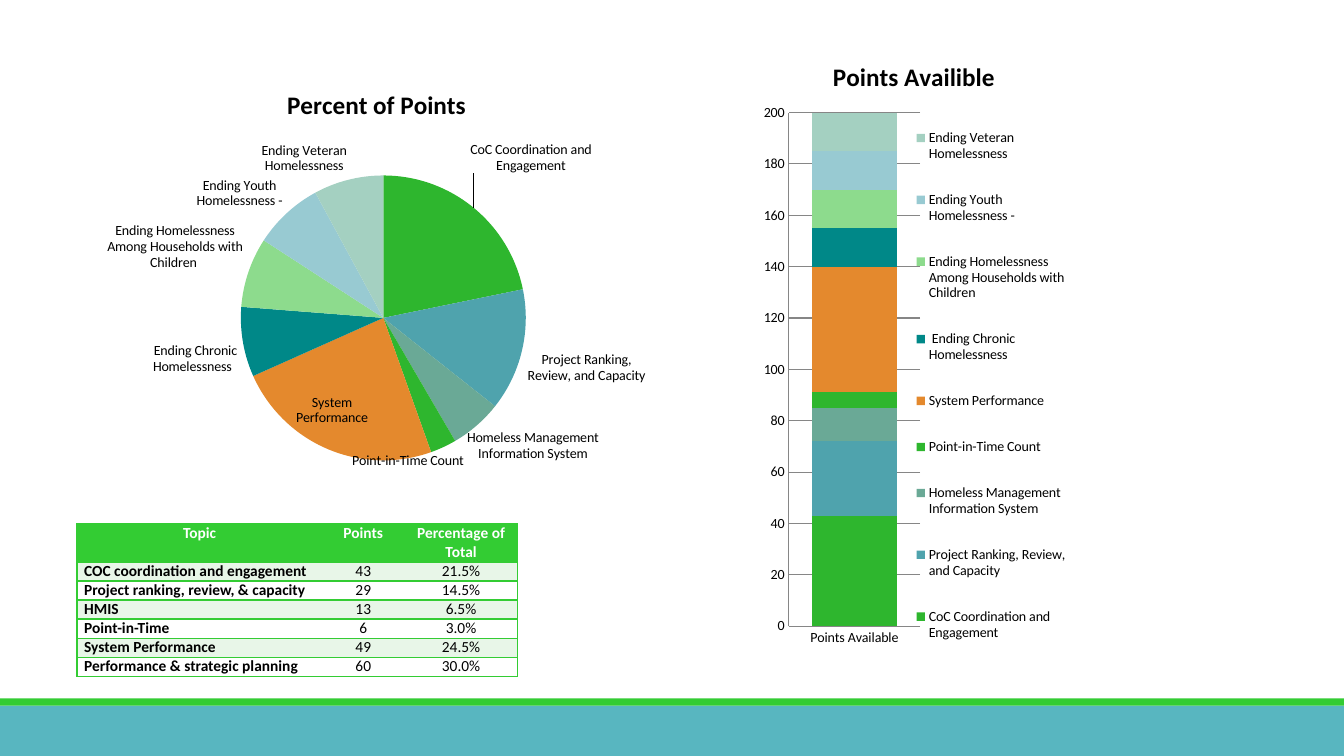
from dataclasses import dataclass

from lxml.etree import SubElement
from pptx import Presentation
from pptx.chart.data import CategoryChartData
from pptx.dml.color import RGBColor
from pptx.enum.chart import (XL_CHART_TYPE, XL_LABEL_POSITION, XL_LEGEND_POSITION,
                             XL_TICK_MARK)
from pptx.enum.shapes import MSO_SHAPE
from pptx.enum.text import PP_ALIGN
from pptx.oxml import parse_xml
from pptx.oxml.ns import nsdecls, qn
from pptx.util import Cm, Pt


@dataclass(frozen=True)
class Theme:
    font: str = "Calibri"
    green: str = "33CC33"
    teal: str = "58B6C0"
    pale_green: str = "E8F6E8"
    white: str = "FFFFFF"
    black: str = "000000"
    grid: str = "868686"
    chart_size: int = 10
    title_size: int = 18
    table_size: int = 11


THEME = Theme()

# Topic, points available, percent of points, colour
TOPICS = [
    ("CoC Coordination and Engagement", 43, 22, "2EB62E"),
    ("Project Ranking, Review, and Capacity", 29, 14, "4FA3AD"),
    ("Homeless Management Information System", 13, 6, "6AA996"),
    ("Point-in-Time Count ", 6, 3, "2EB62E"),
    ("System Performance", 49, 24, "E4892D"),
    (" Ending Chronic Homelessness ", 15, 8, "008888"),
    ("Ending Homelessness Among Households with Children ", 15, 8, "8DDB8D"),
    ("Ending Youth Homelessness -", 15, 8, "98CAD2"),
    ("Ending Veteran Homelessness", 15, 8, "A4D0C1"),
]

# Pie labels moved from their automatic place: index, shift right, shift down
LABEL_SHIFTS = [(0, -0.01, -0.07), (2, -0.02, 0)]

TABLE_ROWS = [
    ("Topic", "Points", "Percentage of Total"),
    ("COC coordination and engagement", "43", "21.5%"),
    ("Project ranking, review, & capacity", "29", "14.5%"),
    ("HMIS", "13", "6.5%"),
    ("Point-in-Time", "6", "3.0%"),
    ("System Performance", "49", "24.5%"),
    ("Performance & strategic planning", "60", "30.0%"),
]


def set_values(target, values):
    for name, value in values.items():
        setattr(target, name, value)


def format_font(font, size, color, bold=False):
    set_values(font, {"name": THEME.font, "size": Pt(size), "bold": bold})
    font.color.rgb = RGBColor.from_string(color)


def fill_solid(target, color):
    target.fill.solid()
    target.fill.fore_color.rgb = RGBColor.from_string(color)


def add_band(slide, top, height, color):
    band = slide.shapes.add_shape(MSO_SHAPE.RECTANGLE, 0, Cm(top), Cm(33.87), Cm(height))
    band.shadow.inherit = False
    fill_solid(band, color)
    band.line.fill.background()


def set_layout(element, position, values):
    """Give a chart part a manual layout in fractions of the chart frame."""
    for old in element.findall(qn("c:layout")):
        element.remove(old)
    layout = parse_xml(f'<c:layout {nsdecls("c")}/>')
    manual = SubElement(layout, qn("c:manualLayout"))
    for name, value in values.items():
        SubElement(manual, qn(f"c:{name}")).set("val", str(value))
    element.insert(position, layout)


def edge_layout(left, top, width, height):
    return {"xMode": "edge", "yMode": "edge", "x": left, "y": top,
            "w": width, "h": height}


def place_plot(chart, *box):
    set_layout(chart.element.find(".//" + qn("c:plotArea")), 0,
               {"layoutTarget": "inner", **edge_layout(*box)})


def add_chart(slide, chart_type, frame, categories, series, title):
    data = CategoryChartData()
    data.categories = categories
    for name, values in series:
        data.add_series(name, values)
    chart = slide.shapes.add_chart(chart_type, *map(Cm, frame), data).chart
    format_font(chart.font, THEME.chart_size, THEME.black)
    chart.has_title = True
    chart.chart_title.text_frame.text = title
    heading = chart.chart_title.text_frame.paragraphs[0].runs[0]
    format_font(heading.font, THEME.title_size, THEME.black, True)
    chart.has_legend = False
    return chart


def shift_label(series, index, right, down):
    label = series.points[index].data_label
    format_font(label.font, THEME.chart_size, THEME.black)
    label.position = XL_LABEL_POSITION.BEST_FIT
    for element in series.data_labels._element.findall(qn("c:dLbl")):
        if element.find(qn("c:idx")).get("val") == str(index):
            element.find(qn("c:showVal")).set("val", "0")
            element.find(qn("c:showCatName")).set("val", "1")
            set_layout(element, 1, {"x": right, "y": down})


def add_percent_pie(slide):
    names, _, percents, colors = zip(*TOPICS)
    title = "Percent of Points"
    chart = add_chart(slide, XL_CHART_TYPE.PIE, (0.94, 1.73, 17.1, 10.74),
                      names, [(title, percents)], title)
    chart.plots[0].vary_by_categories = True
    series = chart.plots[0].series[0]
    for index, color in enumerate(colors):
        fill_solid(series.points[index].format, color)
    labels = series.data_labels
    set_values(labels, {"show_category_name": True, "show_value": False,
                        "show_percentage": False, "number_format": "0",
                        "number_format_is_linked": False,
                        "position": XL_LABEL_POSITION.BEST_FIT})
    format_font(labels.font, THEME.chart_size, THEME.black)
    for shift in LABEL_SHIFTS:
        shift_label(series, *shift)
    place_plot(chart, 0.3, 0.25, 0.42, 0.67)


def add_points_column(slide):
    chart = add_chart(slide, XL_CHART_TYPE.COLUMN_STACKED, (18.98, 0.92, 8.1, 15.98),
                      ["Points Available"],
                      [(name, [points]) for name, points, _, _ in TOPICS],
                      "Points Availible")
    plot = chart.plots[0]
    set_values(plot, {"gap_width": 55, "overlap": 100, "vary_by_categories": False})
    for series, topic in zip(plot.series, TOPICS):
        fill_solid(series.format, topic[3])
    # Axes and grid
    set_values(chart.value_axis, {"minimum_scale": 0, "maximum_scale": 200,
                                  "major_unit": 20, "has_major_gridlines": True})
    for axis in (chart.value_axis, chart.category_axis):
        axis.major_tick_mark = XL_TICK_MARK.NONE
        axis.format.line.color.rgb = RGBColor.from_string(THEME.grid)
    grid_line = chart.value_axis.major_gridlines.format.line
    grid_line.color.rgb = RGBColor.from_string(THEME.grid)
    # Legend
    chart.has_legend = True
    set_values(chart.legend, {"position": XL_LEGEND_POSITION.RIGHT,
                              "include_in_layout": False})
    format_font(chart.legend.font, THEME.chart_size, THEME.black)
    place_plot(chart, 0.11, 0.12, 0.41, 0.81)
    set_layout(chart.element.find(".//" + qn("c:legend")), 1,
               edge_layout(0.49, 0.1, 0.5, 0.9))


def set_borders(cell, visible_sides):
    properties = cell._tc.get_or_add_tcPr()
    for index, side in enumerate("LRTB"):
        paint = (f'<a:solidFill><a:srgbClr val="{THEME.green}"/></a:solidFill>'
                 if side in visible_sides else "<a:noFill/>")
        properties.insert(index, parse_xml(
            f'<a:ln{side} {nsdecls("a")} w="12700">{paint}</a:ln{side}>'))


def add_topic_table(slide):
    widths = (6.18, 2.07, 2.86)
    heights = [0.96] + [0.48] * (len(TABLE_ROWS) - 1)
    table = slide.shapes.add_table(len(TABLE_ROWS), len(widths), Cm(1.94), Cm(13.2),
                                   Cm(sum(widths)), Cm(sum(heights))).table
    for column, width in zip(table.columns, widths):
        column.width = Cm(width)
    for row, height in zip(table.rows, heights):
        row.height = Cm(height)
    for row_index, texts in enumerate(TABLE_ROWS):
        header = row_index == 0
        stripe = THEME.pale_green if row_index % 2 else THEME.white
        for column_index, text in enumerate(texts):
            cell = table.cell(row_index, column_index)
            set_values(cell, {"text": text, "margin_left": Cm(0.18),
                              "margin_right": Cm(0.18), "margin_top": 0,
                              "margin_bottom": 0})
            fill_solid(cell, THEME.green if header else stripe)
            set_borders(cell, "TB" + ("L", "", "R")[column_index])
            paragraph = cell.text_frame.paragraphs[0]
            first = column_index == 0
            paragraph.alignment = (PP_ALIGN.LEFT if first and not header
                                   else PP_ALIGN.CENTER)
            format_font(paragraph.runs[0].font, THEME.table_size,
                        THEME.white if header else THEME.black, header or first)


def main():
    presentation = Presentation()
    set_values(presentation, {"slide_width": Cm(33.87), "slide_height": Cm(19.05)})
    slide = presentation.slides.add_slide(presentation.slide_layouts[6])
    # Footer bands
    add_band(slide, 17.78, 1.27, THEME.teal)
    add_band(slide, 17.6, 0.18, THEME.green)
    # Charts and table
    add_percent_pie(slide)
    add_points_column(slide)
    add_topic_table(slide)
    presentation.save("out.pptx")


if __name__ == "__main__":
    main()
